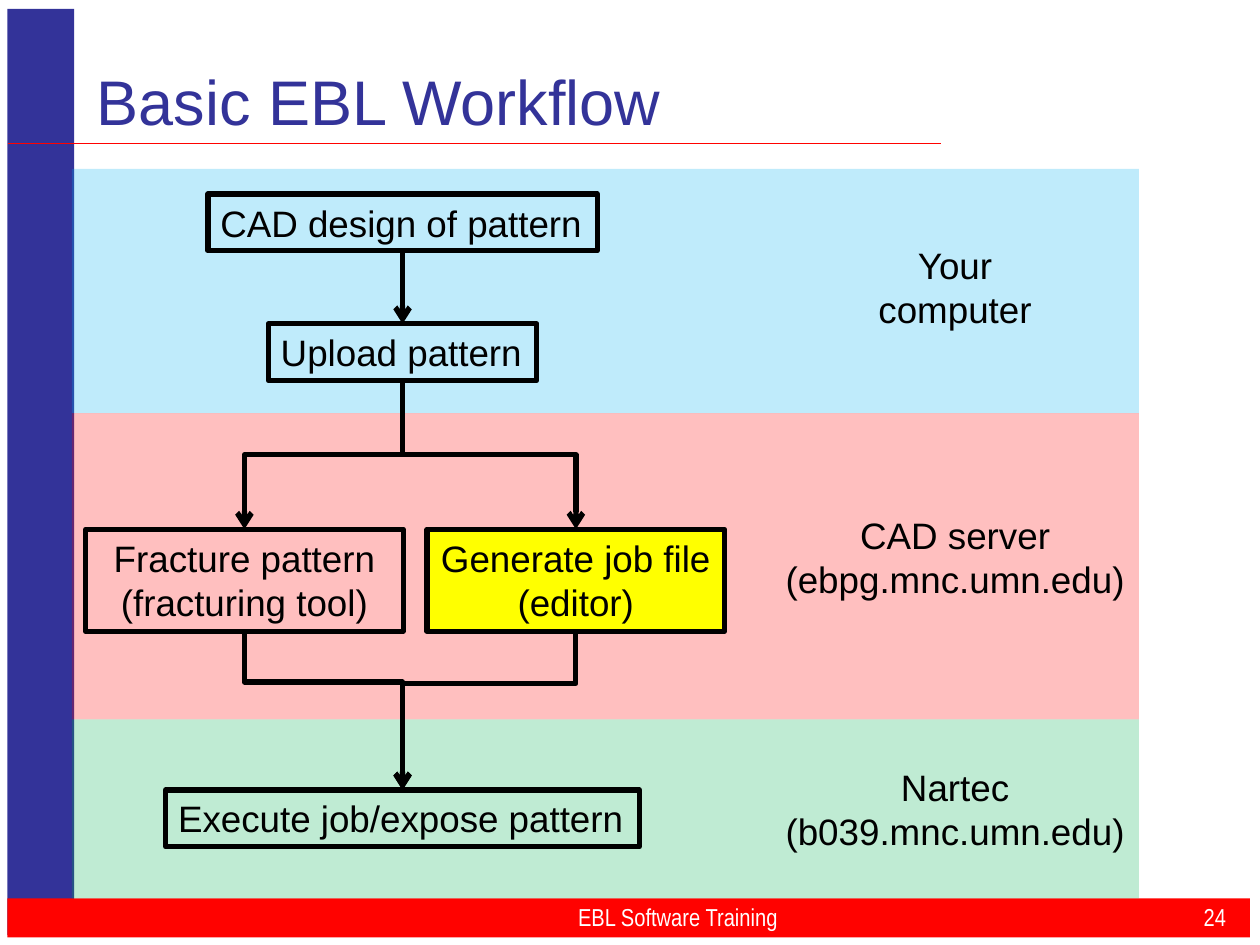
from lxml import etree
from pptx import Presentation
from pptx.dml.color import RGBColor
from pptx.enum import shapes, text
from pptx.oxml.ns import qn
from pptx.util import Inches, Pt

NAVY = RGBColor(0x33, 0x33, 0x99)
RED = RGBColor(0xFF, 0x02, 0x00)
BLACK = RGBColor(0, 0, 0)
WHITE = RGBColor(0xFF, 0xFF, 0xFF)
YELLOW = RGBColor(0xFF, 0xFF, 0x00)
SKY = RGBColor(0x00, 0xB0, 0xF0)
ROSE = RGBColor(0xFF, 0x00, 0x00)
GREEN = RGBColor(0x00, 0xB0, 0x50)

LEFT, CENTER, RIGHT = (text.PP_ALIGN.LEFT, text.PP_ALIGN.CENTER,
                       text.PP_ALIGN.RIGHT)
BODY = {"name": "Arial", "size": Pt(21)}
TITLE = {"name": "Arial", "size": Pt(36)}
FOOTER = {"name": "Arial Narrow", "size": Pt(14)}


def write(sp, lines, style, color=BLACK, align=CENTER, wrap=False,
          anchor=text.MSO_ANCHOR.TOP):
    tf = sp.text_frame
    frame = {"word_wrap": wrap, "vertical_anchor": anchor}
    for key, value in frame.items():
        setattr(tf, key, value)
    for i, line in enumerate(lines):
        p = tf.add_paragraph() if i else tf.paragraphs[0]
        p.alignment = align
        r = p.add_run()
        r.text = line
        for key, value in style.items():
            setattr(r.font, key, value)
        r.font.color.rgb = color


def add_text(s, box, lines, style, **options):
    sp = s.shapes.add_textbox(*map(Inches, box))
    write(sp, lines, style, **options)


def add_rect(s, box, fill=None, alpha=None, line=None):
    sp = s.shapes.add_shape(shapes.MSO_SHAPE.RECTANGLE, *map(Inches, box))
    sp.shadow.inherit = False
    if fill is None:
        sp.fill.background()
    else:
        sp.fill.solid()
        sp.fill.fore_color.rgb = fill
    if alpha:
        clr = sp.element.spPr.find(".//" + qn("a:srgbClr"))
        etree.SubElement(clr, qn("a:alpha"), val=str(alpha * 1000))
    if line is None:
        sp.line.fill.background()
    else:
        sp.line.color.rgb = line
        sp.line.width = Pt(3)
    return sp


def style_line(c, color, width, arrow=False):
    c.line.color.rgb = color
    c.line.width = Pt(width)
    if arrow:
        etree.SubElement(c.line._get_or_add_ln(), qn("a:tailEnd"), type="arrow")
    etree.SubElement(c.element.spPr, qn("a:effectLst"))


def add_arrow(s, start, end, bend=None):
    kind = shapes.MSO_CONNECTOR.ELBOW if bend else shapes.MSO_CONNECTOR.STRAIGHT
    c = s.shapes.add_connector(kind, 0, 0, 0, 0)
    c.begin_connect(start, 2)
    c.end_connect(end, 0)
    if bend:
        x1, y1 = start.left + start.width // 2, start.top + start.height
        x2, y2 = end.left + end.width // 2, end.top
        run, drop = x2 - x1, y2 - y1
        place = {"left": (x1 + x2 - drop) // 2,
                 "top": (y1 + y2 - abs(run)) // 2,
                 "width": drop, "height": abs(run)}
        for key, value in place.items():
            setattr(c, key, value)
        xfrm = c.element.spPr.find(qn("a:xfrm"))
        xfrm.set("rot", "16200000" if run > 0 else "5400000")
        xfrm.set("flipH", "1" if run > 0 else "0")
        xfrm.set("flipV", "0")
        guides = c.element.spPr.find(".//" + qn("a:avLst"))
        etree.SubElement(guides, qn("a:gd"), name="adj1",
                         fmla=f"val {round(bend * 100000)}")
    style_line(c, BLACK, 3, arrow=True)


def add_frame(s, box):
    x, y, w, h = box
    bar = 0.31
    add_rect(s, (x, y, 0.53, h), NAVY)
    add_rect(s, (x, y + h - 0.29, w, bar), RED)
    c = s.shapes.add_connector(shapes.MSO_CONNECTOR.STRAIGHT, Inches(x),
                               Inches(1.14), Inches(7.47), Inches(1.14))
    style_line(c, RED, 1)


def add_captions(s, box):
    x, y, w, h = box
    middle = {"wrap": True, "anchor": text.MSO_ANCHOR.MIDDLE}
    add_text(s, (x + 0.61, y + 0.35, 6.92, 0.75), ["Basic EBL Workflow"],
             TITLE, color=NAVY, align=LEFT, **middle)
    footer_y = y + h - 0.27
    add_text(s, (x + 2.61, footer_y, 5.42, 0.25), ["EBL Software Training"],
             FOOTER, color=WHITE, **middle)
    add_text(s, (x + w - 0.92, footer_y, 0.83, 0.25), ["24"],
             FOOTER, color=WHITE, align=RIGHT, **middle)


def add_zones(s, box):
    x, y, w, h = box
    zones = [
        (1.94, SKY, 0.54, 1.43, ["Your", "computer"]),
        (2.43, ROSE, 0.74, 2.91, ["CAD server", "(ebpg.mnc.umn.edu)"]),
        (1.42, GREEN, 0.31, 2.91, ["Nartec", "(b039.mnc.umn.edu)"]),
    ]
    center = x + w - 1.46
    for height, color, inset, width, lines in zones:
        add_rect(s, (x, y, w, height), color, alpha=25)
        add_text(s, (center - width / 2, y + inset, width, 0.81), lines, BODY)
        y += height


def add_flow(s, box):
    x, y, w, h = box
    center = x + 2.515
    steps = {
        "design": (center, 0, 3.09, ["CAD design of pattern"], None),
        "upload": (center, 1.03, 2.13, ["Upload pattern"], None),
        "fracture": (x + 1.26, 2.66, 2.52,
                     ["Fracture pattern", "(fracturing tool)"], None),
        "job": (x + 3.89, 2.66, 2.36, ["Generate job file", "(editor)"], YELLOW),
        "expose": (center, 4.73, 3.76, ["Execute job/expose pattern"], None),
    }
    nodes = {}
    for name, (mid, drop, width, lines, fill) in steps.items():
        height = 0.81 if len(lines) > 1 else 0.45
        sp = add_rect(s, (mid - width / 2, y + drop, width, height),
                      fill, line=BLACK)
        write(sp, lines, BODY, align=CENTER if len(lines) > 1 else LEFT)
        nodes[name] = sp
    links = [("design", "upload", None),
             ("upload", "fracture", 0.5), ("upload", "job", 0.5),
             ("fracture", "expose", 0.32), ("job", "expose", 0.33)]
    for start, end, bend in links:
        add_arrow(s, nodes[start], nodes[end], bend)


def main():
    prs = Presentation()
    prs.slide_width, prs.slide_height = Inches(10), Inches(7.5)
    s = prs.slides.add_slide(prs.slide_layouts[6])
    frame = (0.06, 0.07, 9.86, 7.35)
    add_frame(s, frame)
    add_zones(s, (0.57, 1.34, 8.47, 5.79))
    add_captions(s, frame)
    add_flow(s, (0.68, 1.54, 5.07, 5.18))
    prs.save("out.pptx")


if __name__ == "__main__":
    main()
